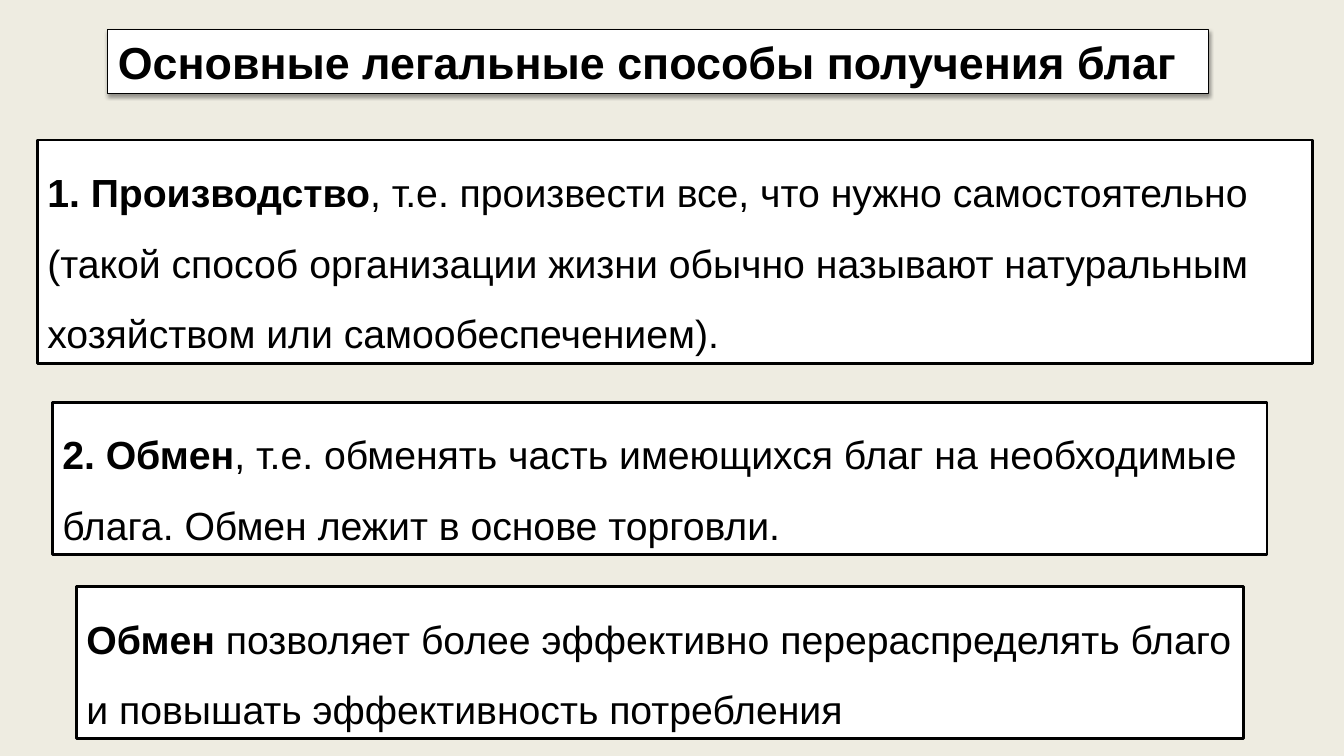
from dataclasses import dataclass

import lxml.etree
import pptx
import pptx.dml.color
import pptx.enum.shapes
import pptx.enum.text
import pptx.oxml.ns
import pptx.util


@dataclass(frozen=True)
class Theme:
    background: str = "EEECE1"
    paper: str = "FFFFFF"
    ink: str = "000000"
    font: str = "Arial"
    title_size: int = 32
    body_size: int = 28
    title_line: float = 0.75
    body_line: float = 2
    body_spacing: float = 1.5


@dataclass(frozen=True)
class Span:
    text: str
    bold: bool = False


@dataclass(frozen=True)
class Panel:
    """A framed text; left, top, width and height are percentages of the page."""
    left: float
    top: float
    width: float
    height: float
    paragraphs: list[list[Span]]
    is_title: bool = False


THEME = Theme()
PAGE_WIDTH = pptx.util.Inches(13.33)
PAGE_HEIGHT = pptx.util.Inches(7.5)

PANELS = [
    Panel(8.03, 3.87, 81.9, 8.53, [
        [Span("Основные легальные способы получения благ", bold=True)],
    ], is_title=True),
    Panel(2.78, 18.53, 94.88, 29.6, [
        [Span("1. Производство", bold=True),
         Span(", т.е. произвести все, что нужно самостоятельно")],
        [Span("(такой способ организации жизни обычно называют натуральным "
              "хозяйством или самообеспечением).")],
    ]),
    Panel(3.9, 53.2, 90.38, 20.13, [
        [Span("2. Обмен", bold=True),
         Span(", т.е. обменять часть имеющихся благ на необходимые блага. "
              "Обмен лежит в основе торговли.")],
    ]),
    Panel(5.7, 77.6, 86.85, 20.13, [
        [Span("Обмен", bold=True),
         Span(" позволяет более эффективно перераспределять благо "
              "и повышать эффективность потребления")],
    ]),
]


def color(code: str) -> pptx.dml.color.RGBColor:
    return pptx.dml.color.RGBColor.from_string(code)


def add_span(paragraph, text: str, *, size: float, bold: bool = False) -> None:
    run = paragraph.add_run()
    run.text = text
    run.font.name = THEME.font
    run.font.size = pptx.util.Pt(size)
    run.font.bold = bold
    run.font.color.rgb = color(THEME.ink)


def add_drop_shadow(box) -> None:
    """Put a soft shadow straight below the box."""
    qualified = pptx.oxml.ns.qn
    effects = box._element.spPr.find(qualified("a:effectLst"))
    shadow = lxml.etree.SubElement(
        effects, qualified("a:outerShdw"),
        blurRad=str(pptx.util.Pt(3.1)), dist=str(pptx.util.Pt(1.6)),
        dir="5400000", rotWithShape="0")
    shade = lxml.etree.SubElement(shadow, qualified("a:srgbClr"), val=THEME.ink)
    lxml.etree.SubElement(shade, qualified("a:alpha"), val="38000")


def add_panel(page, panel: Panel) -> None:
    box = page.shapes.add_shape(
        pptx.enum.shapes.MSO_SHAPE.RECTANGLE,
        round(PAGE_WIDTH * panel.left / 100), round(PAGE_HEIGHT * panel.top / 100),
        round(PAGE_WIDTH * panel.width / 100), round(PAGE_HEIGHT * panel.height / 100))
    box.shadow.inherit = False
    box.fill.solid()
    box.fill.fore_color.rgb = color(THEME.paper)
    box.line.color.rgb = color(THEME.ink)
    box.line.width = pptx.util.Pt(THEME.title_line if panel.is_title else THEME.body_line)
    if panel.is_title:
        add_drop_shadow(box)

    frame = box.text_frame
    frame.word_wrap = True
    frame.auto_size = pptx.enum.text.MSO_AUTO_SIZE.SHAPE_TO_FIT_TEXT
    frame.vertical_anchor = pptx.enum.text.MSO_ANCHOR.TOP
    size = THEME.title_size if panel.is_title else THEME.body_size
    for index, spans in enumerate(panel.paragraphs):
        paragraph = frame.add_paragraph() if index else frame.paragraphs[0]
        paragraph.alignment = pptx.enum.text.PP_ALIGN.LEFT
        if not panel.is_title:
            paragraph.line_spacing = THEME.body_spacing
        for span in spans:
            add_span(paragraph, span.text, size=size, bold=span.bold)


def main() -> None:
    deck = pptx.Presentation()
    deck.slide_width = PAGE_WIDTH
    deck.slide_height = PAGE_HEIGHT
    page = deck.slides.add_slide(deck.slide_layouts[6])
    page.background.fill.solid()
    page.background.fill.fore_color.rgb = color(THEME.background)
    for panel in PANELS:
        add_panel(page, panel)
    deck.save("out.pptx")


if __name__ == "__main__":
    main()
